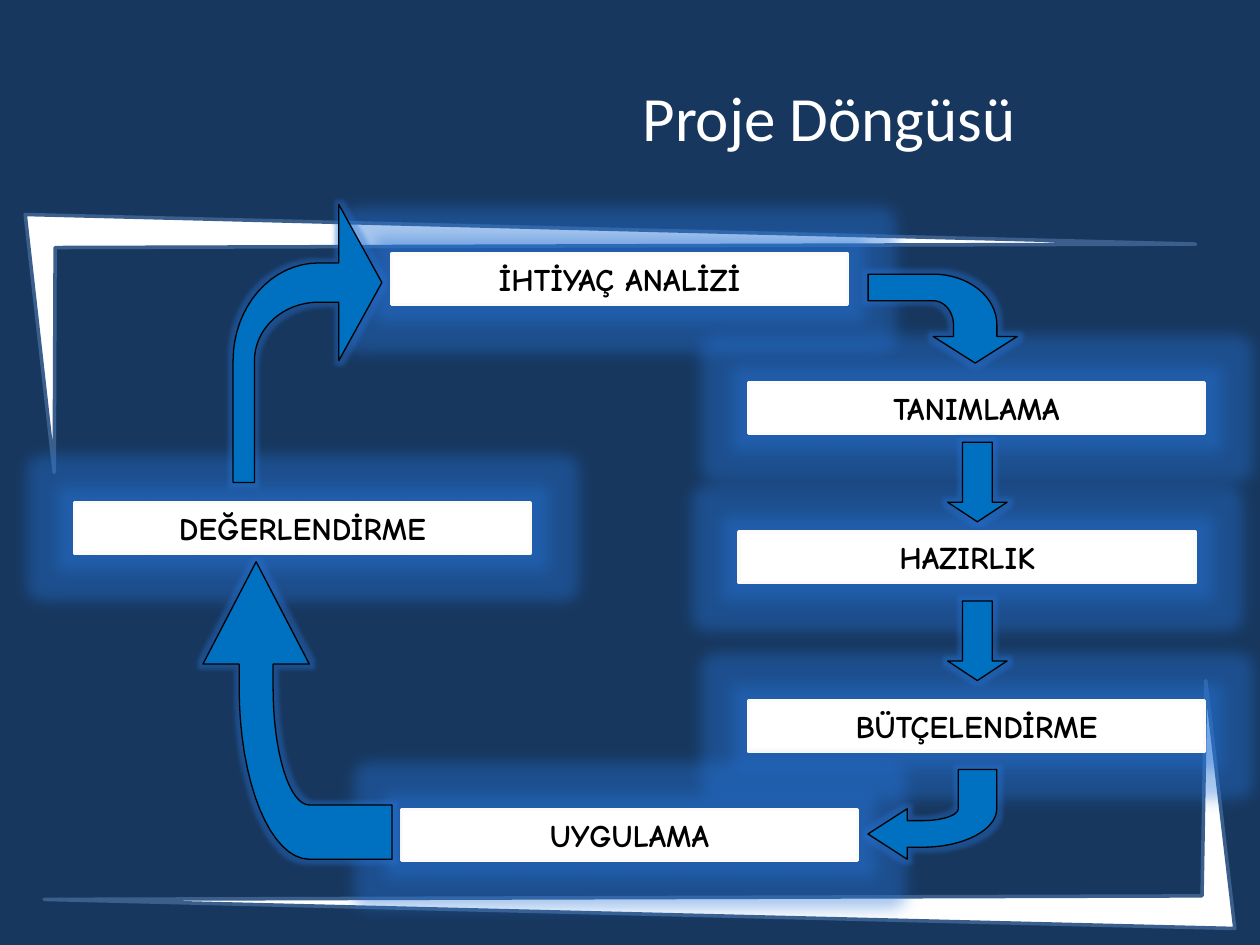
"""Builds the project cycle slide."""
from dataclasses import dataclass
from math import cos, pi, sin

from lxml.etree import SubElement
from pptx import Presentation
from pptx.dml.color import RGBColor
from pptx.enum.shapes import MSO_SHAPE
from pptx.enum.text import MSO_ANCHOR, PP_ALIGN
from pptx.oxml.ns import qn
from pptx.util import Pt


@dataclass(frozen=True)
class Theme:
    background: str = "17375E"
    white: str = "FFFFFF"
    frame_line: str = "3A5F8C"
    step_line: str = "FCFBF9"
    arrow: str = "0070C0"
    black: str = "000000"
    glow: str = "2673D6"
    title_font: str = "Calibri"
    step_font: str = "Comic Neue"
    title_size: int = 36
    step_size: int = 18
    step_glow: int = 18
    arrow_glow: int = 5


def quarter_arc(start, corner, end, steps=16):
    angles = [pi / 2 * i / steps for i in range(1, steps + 1)]
    return [
        tuple(c + (s - c) * (1 - sin(a)) + (e - c) * (1 - cos(a))
              for s, c, e in zip(start, corner, end))
        for a in angles
    ]


class CycleSlide:
    def __init__(self, slide, theme):
        self.slide = slide
        self.theme = theme
        slide.background.fill.solid()
        slide.background.fill.fore_color.rgb = RGBColor.from_string(theme.background)

    def paint(self, shape, fill, line, width, glow=0):
        shape.shadow.inherit = False
        shape.fill.solid()
        shape.fill.fore_color.rgb = RGBColor.from_string(fill)
        shape.line.color.rgb = RGBColor.from_string(line)
        shape.line.width = Pt(width)
        if glow:
            effects = shape._element.spPr.find(qn("a:effectLst"))
            halo = SubElement(effects, qn("a:glow"), rad=str(Pt(glow)))
            tint = SubElement(halo, qn("a:srgbClr"), val=self.theme.glow)
            SubElement(tint, qn("a:alpha"), val="40000")

    def label(self, frame, text, font, size, color, bold=False):
        frame.text = text
        frame.word_wrap = True
        frame.vertical_anchor = MSO_ANCHOR.MIDDLE
        paragraph = frame.paragraphs[0]
        paragraph.alignment = PP_ALIGN.CENTER
        style = paragraph.runs[0].font
        style.name, style.size, style.bold = font, Pt(size), bold
        style.color.rgb = RGBColor.from_string(color)

    def outline(self, points):
        first, *rest = [(Pt(x), Pt(y)) for x, y in points]
        builder = self.slide.shapes.build_freeform(*first, scale=1.0)
        builder.add_line_segments(rest, close=True)
        return builder.convert_to_shape()

    def frame_corner(self, points):
        self.paint(self.outline(points), self.theme.white, self.theme.frame_line, 2)

    def title(self, text, left, top, width, height):
        box = self.slide.shapes.add_textbox(Pt(left), Pt(top), Pt(width), Pt(height))
        self.label(box.text_frame, text, self.theme.title_font,
                   self.theme.title_size, self.theme.white)

    def step(self, text, left, top, width=260.6, height=29):
        box = self.slide.shapes.add_shape(
            MSO_SHAPE.RECTANGLE, Pt(left), Pt(top), Pt(width), Pt(height))
        self.paint(box, self.theme.white, self.theme.step_line, 2, self.theme.step_glow)
        self.label(box.text_frame, text, self.theme.step_font,
                   self.theme.step_size, self.theme.black, bold=True)

    def paint_arrow(self, arrow):
        self.paint(arrow, self.theme.arrow, self.theme.black, 0.75, self.theme.arrow_glow)

    def down_arrow(self, left, top, width=34, height=45.4):
        arrow = self.slide.shapes.add_shape(
            MSO_SHAPE.DOWN_ARROW, Pt(left), Pt(top), Pt(width), Pt(height))
        arrow.adjustments[0] = 0.5
        arrow.adjustments[1] = 0.33
        self.paint_arrow(arrow)

    def bent_arrow(self, tip, back, tail, head, half_head, half_shaft, bend, length, reach, stem):
        inner = length - stem
        local = [
            (0, 0), (head, -half_head), (head, -half_shaft), (bend, -half_shaft),
            *quarter_arc((bend, -half_shaft), (length, -half_shaft), (length, half_head)),
            (length, reach), (inner, reach), (inner, half_head),
            *quarter_arc((inner, half_head), (inner, half_shaft), (bend, half_shaft)),
            (head, half_shaft), (head, half_head),
        ]
        self.paint_arrow(self.outline([
            tuple(t + u * b + v * s for t, b, s in zip(tip, back, tail)) for u, v in local
        ]))


def main():
    presentation = Presentation()
    presentation.slide_width, presentation.slide_height = Pt(720), Pt(540)
    cycle = CycleSlide(presentation.slides.add_slide(presentation.slide_layouts[6]), Theme())

    cycle.frame_corner([(14.4, 122.6), (683.3, 139.5), (31.5, 141.5), (31, 270)])
    cycle.frame_corner([(705.6, 530.6), (25.2, 514), (686.9, 512), (689, 388.8)])
    cycle.title("Proje Döngüsü", 263.5, 21.6, 420.5, 90)

    for text, left, top in [
        ("İHTİYAÇ ANALİZİ", 223.7, 145.1),
        ("TANIMLAMA", 427.7, 218.7),
        ("HAZIRLIK", 422.4, 304),
        ("BÜTÇELENDİRME", 427.7, 400.3),
        ("UYGULAMA", 229.4, 462.7),
        ("DEĞERLENDİRME", 42.5, 287),
    ]:
        cycle.step(text, left, top)

    up, down, left, right = (0, -1), (0, 1), (-1, 0), (1, 0)
    cycle.bent_arrow((557.3, 207.5), up, left, head=15.2, half_head=24, half_shaft=12.4,
                     bend=21.8, length=50.8, reach=61.2, stem=15.2)
    for top in (252.8, 343.5):
        cycle.down_arrow(541.5, top)
    cycle.bent_arrow((496, 476.6), right, up, head=22.4, half_head=14.4, half_shaft=7.6,
                     bend=31, length=73.6, reach=36.8, stem=22)
    cycle.bent_arrow((146.4, 321), down, right, head=58.5, half_head=30.4, half_shaft=9.7,
                     bend=72, length=170, reach=77.6, stem=31)
    cycle.bent_arrow((218.2, 161.5), left, down, head=24.6, half_head=44.6, half_shaft=11.2,
                     bend=36.2, length=85, reach=114.2, stem=12.2)

    presentation.save("out.pptx")


if __name__ == "__main__":
    main()
